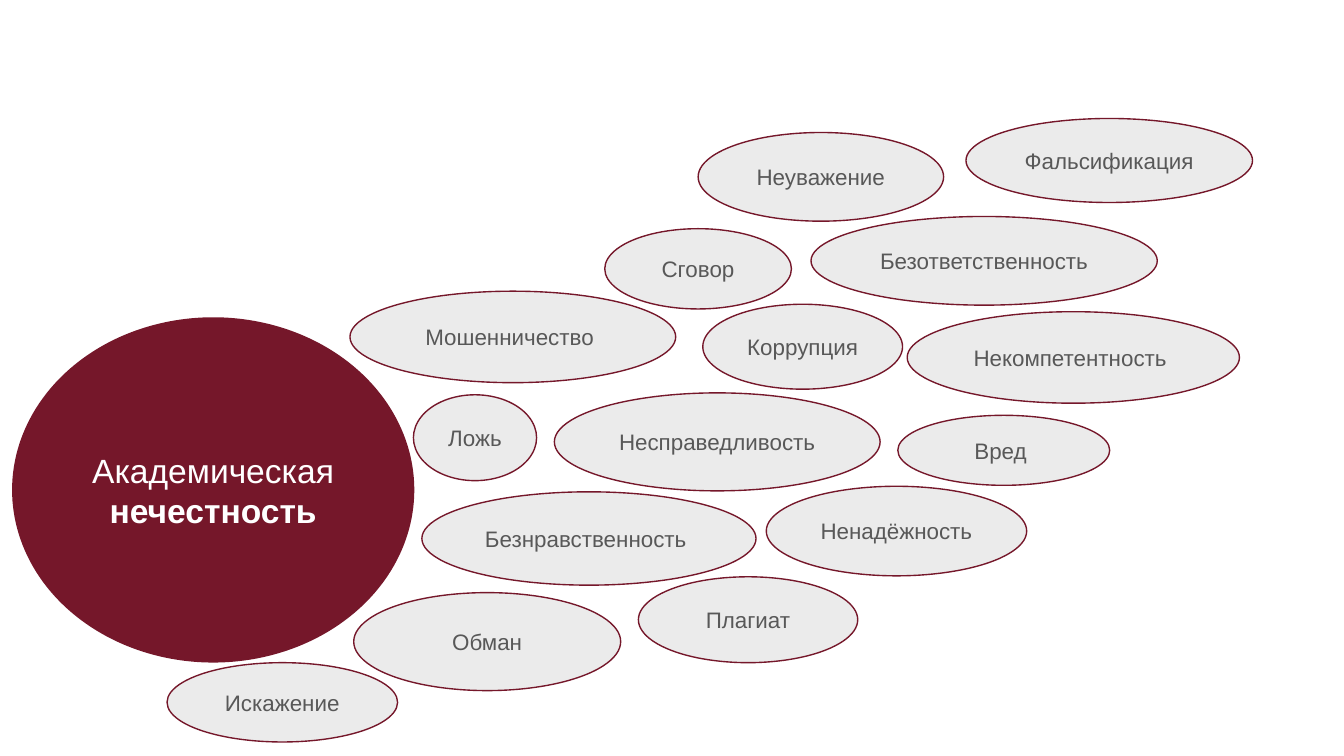
import pptx
import pptx.dml.color
import pptx.enum.shapes
import pptx.enum.text
import pptx.util

PX = 6350
FONT = "Arial"
WHITE = pptx.dml.color.RGBColor(0xFF, 0xFF, 0xFF)
MAROON = pptx.dml.color.RGBColor(0x75, 0x17, 0x2A)
PALE = pptx.dml.color.RGBColor(0xEB, 0xEB, 0xEB)
GREY = pptx.dml.color.RGBColor(0x58, 0x58, 0x58)

TOPIC = (13, 340, 431, 370)
TRAITS = [
    ("Ложь", 443, 423, 132, 92),
    ("Мошенничество ", 375, 312, 349, 98),
    ("Плагиат", 684, 618, 235, 92),
    ("Обман", 379, 635, 286, 105),
    ("Сговор", 648, 245, 200, 86),
    ("Неуважение", 748, 142, 263, 95),
    ("Безнравственность ", 452, 527, 358, 100),
    ("Несправедливость", 594, 421, 349, 105),
    ("Некомпетентность ", 972, 334, 356, 98),
    ("Искажение", 179, 710, 247, 85),
    ("Ненадёжность", 821, 521, 279, 96),
    ("Безответственность", 869, 232, 371, 95),
    ("Коррупция", 753, 326, 214, 91),
    ("Вред ", 962, 445, 227, 75),
    ("Фальсификация", 1035, 127, 307, 90),
]


def add_ellipse(s, box, fill):
    """Add an ellipse with centred text and return it."""
    sp = s.shapes.add_shape(
        pptx.enum.shapes.MSO_SHAPE.OVAL, *(v * PX for v in box))
    sp.shadow.inherit = False
    sp.fill.solid()
    sp.fill.fore_color.rgb = fill
    tf = sp.text_frame
    tf.word_wrap = True
    tf.vertical_anchor = pptx.enum.text.MSO_ANCHOR.MIDDLE
    tf.paragraphs[0].alignment = pptx.enum.text.PP_ALIGN.CENTER
    return sp


def add_run(p, text, size, color, bold=False):
    """Append a styled run to a paragraph."""
    r = p.add_run()
    r.text = text
    r.font.name = FONT
    r.font.size = pptx.util.Pt(size)
    r.font.bold = bold
    r.font.color.rgb = color


def add_topic(s):
    """Add the large circle that names the topic."""
    sp = add_ellipse(s, TOPIC, MAROON)
    sp.line.fill.background()
    p = sp.text_frame.paragraphs[0]
    add_run(p, "Академическая", 18, WHITE)
    add_run(p, " нечестность", 18, WHITE, bold=True)


def add_trait(s, text, *box):
    """Add one outlined bubble with a trait."""
    sp = add_ellipse(s, box, PALE)
    sp.line.color.rgb = MAROON
    sp.line.width = pptx.util.Pt(0.75)
    add_run(sp.text_frame.paragraphs[0], text, 12, GREY)


def main():
    """Build the slide and save it."""
    prs = pptx.Presentation()
    prs.slide_width = 1440 * PX
    prs.slide_height = 810 * PX
    s = prs.slides.add_slide(prs.slide_layouts[6])
    s.background.fill.solid()
    s.background.fill.fore_color.rgb = WHITE
    add_topic(s)
    for trait in TRAITS:
        add_trait(s, *trait)
    prs.save("out.pptx")


if __name__ == "__main__":
    main()
